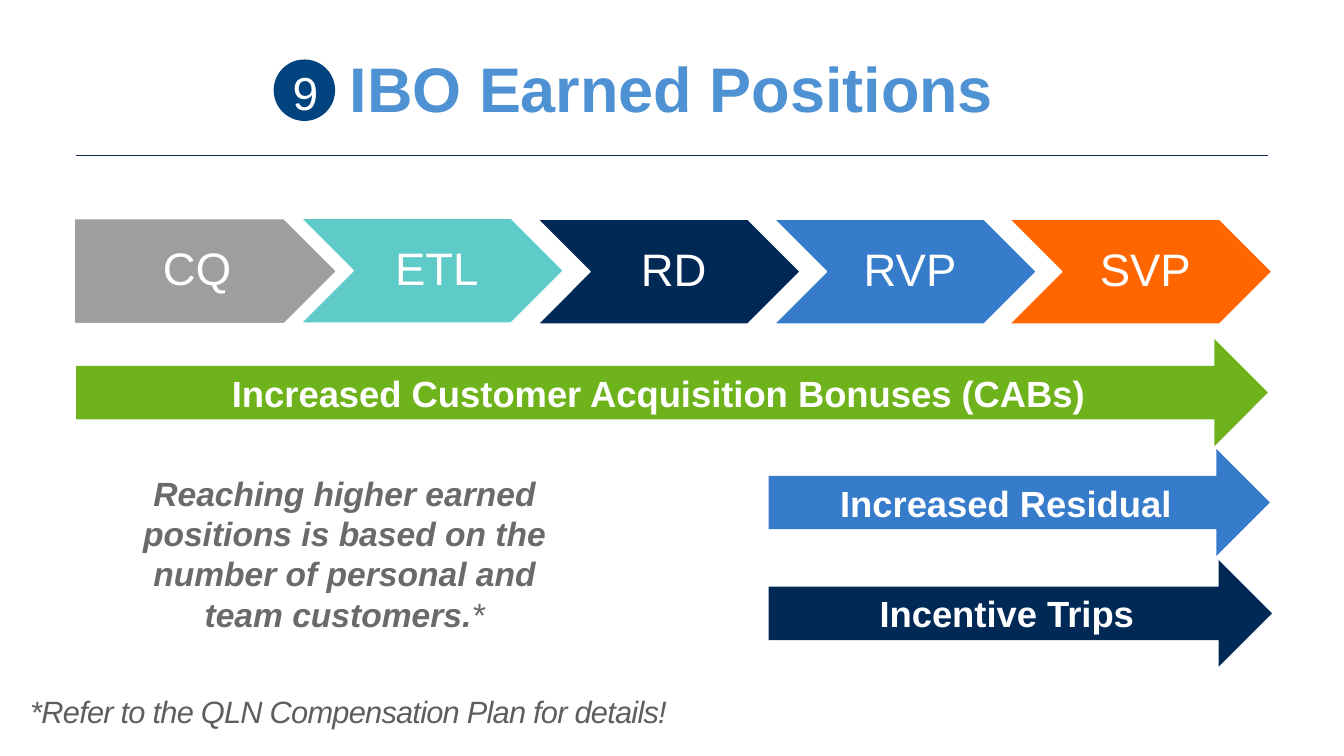
from lxml.etree import SubElement
from pptx import Presentation
from pptx.dml.color import RGBColor
from pptx.enum.shapes import MSO_CONNECTOR, MSO_SHAPE as Shape
from pptx.enum.text import MSO_ANCHOR as Anchor, PP_ALIGN as Align
from pptx.oxml.ns import qn
from pptx.util import Inches, Pt

WHITE = RGBColor(0xFF, 0xFF, 0xFF)
GREY = RGBColor(0x9E, 0x9E, 0x9E)
TEAL = RGBColor(0x5F, 0xCB, 0xC9)
NAVY = RGBColor(0x00, 0x29, 0x56)
BLUE = RGBColor(0x36, 0x7C, 0xCA)
ORANGE = RGBColor(0xFF, 0x66, 0x00)
GREEN = RGBColor(0x6F, 0xB3, 0x1C)
TITLE_BLUE = RGBColor(0x4F, 0x92, 0xD3)
BADGE_BLUE = RGBColor(0x00, 0x43, 0x7E)
RULE_BLUE = RGBColor(0x10, 0x2C, 0x53)
NOTE_GREY = RGBColor(0x6C, 0x69, 0x69)
FOOT_GREY = RGBColor(0x5E, 0x5E, 0x5E)

TIGHT = (0.08, 0.08, 0.08, 0.08)
STANDARD = (0.1, 0.05, 0.1, 0.05)
STEP_INSETS = (0.28, 0.09, 0.09, 0.09)
STEP_WIDTH, STEP_HEIGHT = 5.21, 2.08
ARROW_HEIGHT = 2.12


class SlideBuilder:
    font = "Arial"

    def __init__(self, page):
        self.page = page

    def fill_text(self, shape, spans, insets=STANDARD, anchor=Anchor.MIDDLE,
                  wrap=True, spacing=None):
        """Write one centred paragraph; spans are (text, font values) pairs."""
        frame = shape.text_frame
        left, top, right, bottom = map(Inches, insets)
        values = dict(margin_left=left, margin_top=top, margin_right=right,
                      margin_bottom=bottom, vertical_anchor=anchor, word_wrap=wrap)
        for name, value in values.items():
            setattr(frame, name, value)
        para = frame.paragraphs[0]
        para.alignment = Align.CENTER
        para.line_spacing = spacing
        for text, values in spans:
            span = para.add_run()
            span.text = text
            values = dict(values)
            span.font.color.rgb = values.pop("color")
            for name, value in {"name": self.font, **values}.items():
                setattr(span.font, name, value)
        return para

    def text(self, area, spans, **layout):
        box = self.page.shapes.add_textbox(*map(Inches, area))
        return self.fill_text(box, spans, **layout)

    def shape(self, kind, area, color, outline=None):
        shape = self.page.shapes.add_shape(kind, *map(Inches, area))
        shape.shadow.inherit = False
        shape.fill.solid()
        shape.fill.fore_color.rgb = color
        if outline is None:
            shape.line.fill.background()
        else:
            shape.line.color.rgb = outline
            shape.line.width = Pt(2)
        return shape

    def step(self, kind, left, top, label, color):
        self.shape(kind, (left, top, STEP_WIDTH, STEP_HEIGHT), color, WHITE)
        point = STEP_HEIGHT / 2
        if kind == Shape.CHEVRON:
            left, width = left + point, STEP_WIDTH - 2 * point
        else:
            width = STEP_WIDTH - point / 2
        self.text((left, top, width, STEP_HEIGHT),
                  [(label, dict(size=Pt(65), color=WHITE))],
                  insets=STEP_INSETS, spacing=0.9)

    def arrow(self, left, top, width, label, color):
        shape = self.shape(Shape.RIGHT_ARROW, (left, top, width, ARROW_HEIGHT), color)
        self.fill_text(shape, [(label, dict(size=Pt(52), bold=True, color=WHITE))])

    def rule(self, left, right, top):
        line = self.page.shapes.add_connector(
            MSO_CONNECTOR.STRAIGHT, *map(Inches, (left, top, right, top)))
        line.line.color.rgb = RULE_BLUE
        line.line.width = Pt(1)
        SubElement(line._element.spPr, qn("a:effectLst"))


def main():
    deck = Presentation()
    deck.slide_width, deck.slide_height = Inches(26.67), Inches(15)
    builder = SlideBuilder(deck.slides.add_slide(deck.slide_layouts[6]))

    # Chain of earned positions
    steps = [
        (Shape.PENTAGON, 1.47, 4.34, "CQ", GREY),
        (Shape.CHEVRON, 5.97, 4.33, "ETL", TEAL),
        (Shape.CHEVRON, 10.67, 4.35, "RD", NAVY),
        (Shape.CHEVRON, 15.36, 4.35, "RVP", BLUE),
        (Shape.CHEVRON, 20.03, 4.35, "SVP", ORANGE),
    ]
    for step in steps:
        builder.step(*step)

    # Title with number badge and rule
    builder.text((6.8, 1.2, 13.06, 1.44),
                 [("IBO Earned Positions", dict(size=Pt(90), bold=True, color=TITLE_BLUE))],
                 insets=TIGHT, anchor=Anchor.TOP, wrap=False, spacing=0.8)
    builder.shape(Shape.OVAL, (5.43, 1.18, 1.22, 1.22), BADGE_BLUE)
    builder.text((5.45, 1.18, 1.22, 1.07), [("9", dict(size=Pt(66), color=WHITE))],
                 insets=TIGHT, spacing=Pt(94))
    builder.rule(1.51, 25.16, 3.09)

    # Benefit arrows
    arrows = [
        (15.25, 11.11, 9.99, "Incentive Trips", NAVY),
        (15.25, 8.91, 9.95, "Increased Residual", BLUE),
        (1.51, 6.73, 23.65, "Increased Customer Acquisition Bonuses (CABs)", GREEN),
    ]
    for arrow in arrows:
        builder.arrow(*arrow)

    # Explanation and footnote
    note = dict(size=Pt(48), italic=True, color=NOTE_GREY)
    builder.text((2.11, 9.33, 9.46, 3.33),
                 [("Reaching higher earned positions is based on the number of "
                   "personal and team customers.", dict(note, bold=True)),
                  ("*", dict(note, bold=False))], anchor=Anchor.TOP)
    footnote = builder.text(
        (0.52, 13.66, 12.8, 0.9),
        [("*Refer to the QLN Compensation Plan for details!",
          dict(size=Pt(44), italic=True, color=FOOT_GREY))],
        insets=TIGHT, wrap=False)
    footnote.runs[0].font._element.set("spc", "-110")

    deck.save("out.pptx")


if __name__ == "__main__":
    main()
